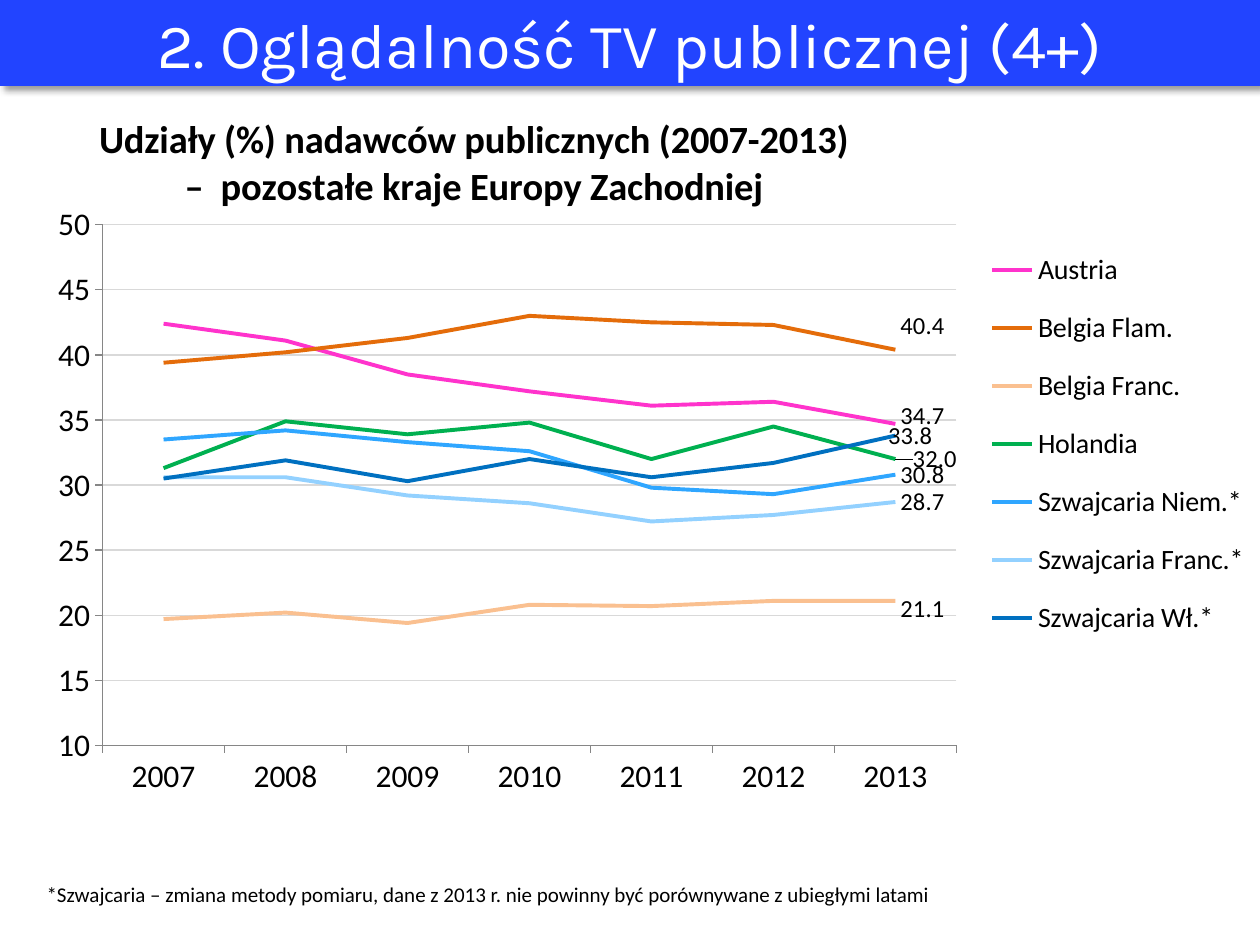
"""Build a slide on public TV audience shares in Western Europe."""
from pptx import Presentation, util as u
from pptx.chart.data import CategoryChartData
from pptx.dml.color import RGBColor
from pptx.enum import chart as ch, text
from pptx.oxml import parse_xml
from pptx.oxml.ns import nsdecls, qn

HUES = {
    "bar": "2244FF", "white": "FFFFFF", "ink": "000000", "grid": "D9D9D9", "axis": "868686",
    "Austria": "FF33CC", "Belgia Flam.": "E46C0A", "Belgia Franc.": "FAC090",
    "Holandia": "00B050", "Szwajcaria Niem.*": "2FA6FF",
    "Szwajcaria Franc.*": "93D1FF", "Szwajcaria Wł.*": "0070C0",
}
SHARES = {
    "Austria": (42.4, 41.1, 38.5, 37.2, 36.1, 36.4, 34.7),
    "Belgia Flam.": (39.4, 40.2, 41.3, 43, 42.5, 42.3, 40.4),
    "Belgia Franc.": (19.7, 20.2, 19.4, 20.8, 20.7, 21.1, 21.1),
    "Holandia": (31.3, 34.9, 33.9, 34.8, 32, 34.5, 32),
    "Szwajcaria Niem.*": (33.5, 34.2, 33.3, 32.6, 29.8, 29.3, 30.8),
    "Szwajcaria Franc.*": (30.6, 30.6, 29.2, 28.6, 27.2, 27.7, 28.7),
    "Szwajcaria Wł.*": (30.5, 31.9, 30.3, 32, 30.6, 31.7, 33.8),
}
SHIFTS = ((0, -0.01), (0, -0.03), (0, 0.01), (0.01, 0), (0, 0), (0, 0), (-0.01, 0))


def style(font, size, hue="ink", face="Calibri", bold=False):
    font.size, font.name, font.bold = u.Pt(size), face, bold
    font.color.rgb = RGBColor.from_string(HUES[hue])


def place(part, slot, **vals):
    for old in part.findall(qn("c:layout")):
        part.remove(old)
    rows = "".join(f'<c:{key} val="{val}"/>' for key, val in vals.items())
    part.insert(slot, parse_xml(
        f'<c:layout {nsdecls("c")}><c:manualLayout>{rows}</c:manualLayout></c:layout>'))


deck = Presentation()
deck.slide_width, deck.slide_height = u.Cm(25.4), u.Cm(19.05)
slide = deck.slides.add_slide(deck.slide_layouts[5])

title = slide.shapes.title
title.left, title.top, title.width, title.height = u.Cm(0), u.Cm(0), u.Cm(25.4), u.Cm(1.73)
title.fill.solid()
title.fill.fore_color.rgb = RGBColor.from_string(HUES["bar"])
title._element.spPr.append(parse_xml(
    f'<a:effectLst {nsdecls("a")}><a:outerShdw blurRad="50800" dist="38100" dir="2700000" '
    f'algn="tl" rotWithShape="0"><a:srgbClr val="{HUES["ink"]}"><a:alpha val="40000"/>'
    '</a:srgbClr></a:outerShdw></a:effectLst>'))
frame = title.text_frame
frame.text = "2. Oglądalność TV publicznej (4+)"
frame.auto_size = text.MSO_AUTO_SIZE.NONE
frame.vertical_anchor = text.MSO_ANCHOR.MIDDLE
frame.paragraphs[0].alignment = text.PP_ALIGN.CENTER
style(frame.paragraphs[0].font, 36, "white", "Karla")

data = CategoryChartData(number_format="0.0")
data.categories = [str(year) for year in range(2007, 2014)]
for name, vals in SHARES.items():
    data.add_series(name, vals)
chart = slide.shapes.add_chart(ch.XL_CHART_TYPE.LINE, u.Cm(0.43), u.Cm(2.06),
                               u.Cm(24.84), u.Cm(16.05), data).chart
style(chart.font, 18)
plot = chart.plots[0]
plot.vary_by_categories = False

chart.has_title = True
head = chart.chart_title
head.text_frame.text = "Udziały (%) nadawców publicznych (2007-2013)\n–  pozostałe kraje Europy Zachodniej"
for para in head.text_frame.paragraphs:
    para.alignment = text.PP_ALIGN.CENTER
    style(para.font, 22, bold=True)
head.include_in_layout = False
place(head._element, 1, xMode="edge", yMode="edge", x=0.06, y=0.01)

chart.has_legend = True
key = chart.legend
key.position = ch.XL_LEGEND_POSITION.RIGHT
key.include_in_layout = False
style(key.font, 16)
place(key._element, 1, xMode="edge", yMode="edge", x=0.78, y=0.16, w=0.22, h=0.54)

area = chart._chartSpace.find(qn("c:chart")).find(qn("c:plotArea"))
place(area, 0, layoutTarget="inner", xMode="edge", yMode="edge",
      x=0.066, y=0.154, w=0.693, h=0.654)

rise = chart.value_axis
rise.minimum_scale, rise.maximum_scale, rise.major_unit = 10, 50, 5
rise.tick_labels.number_format = "0"
rise.tick_labels.number_format_is_linked = False
rise.has_major_gridlines = True
grid = rise.major_gridlines.format.line
grid.color.rgb = RGBColor.from_string(HUES["grid"])
grid.width = u.Pt(0.75)
for axis in (rise, chart.category_axis):
    axis.major_tick_mark = ch.XL_TICK_MARK.OUTSIDE
    axis.format.line.color.rgb = RGBColor.from_string(HUES["axis"])
    axis.format.line.width = u.Pt(0.75)
    style(axis.tick_labels.font, 18)

for line, (across, down) in zip(plot.series, SHIFTS):
    line.smooth = False
    line.marker.style = ch.XL_MARKER_STYLE.NONE
    line.format.line.color.rgb = RGBColor.from_string(HUES[line.name])
    line.format.line.width = u.Pt(2.25)
    line.data_labels.show_value = False
    label = line.points[6].data_label
    style(label.font, 14)
    label.position = ch.XL_LABEL_POSITION.RIGHT
    place(line.data_labels._element.find(qn("c:dLbl")), 1, x=across, y=down)

note = slide.shapes.add_textbox(u.Cm(0.69), u.Cm(17.65), u.Cm(24.71), u.Cm(0.77)).text_frame
note.word_wrap = True
note.auto_size = text.MSO_AUTO_SIZE.SHAPE_TO_FIT_TEXT
note.text = ("*Szwajcaria – zmiana metody pomiaru, dane z 2013 r. "
             "nie powinny być porównywane z ubiegłymi latami")
style(note.paragraphs[0].font, 12)

deck.save("out.pptx")
